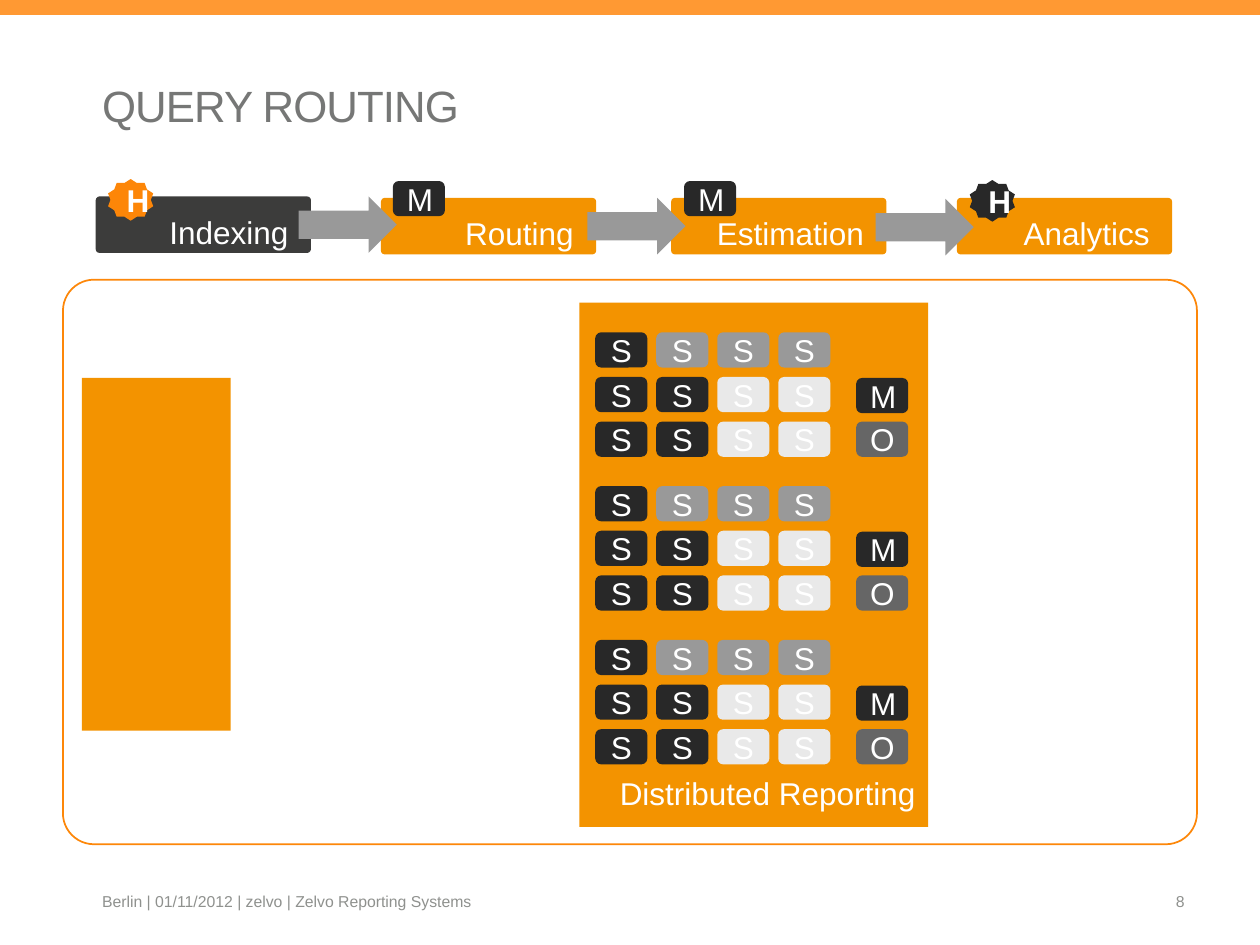
from dataclasses import dataclass

from pptx import Presentation
from pptx.dml.color import RGBColor
from pptx.enum.shapes import MSO_SHAPE
from pptx.enum.text import MSO_ANCHOR, MSO_AUTO_SIZE, PP_ALIGN
from pptx.util import Cm, Pt


@dataclass(frozen=True)
class Theme:
    font: str = "Arial"
    title_size: int = 25
    title_leading: int = 26
    label_size: int = 18
    footer_size: int = 9
    bar: str = "FF9933"
    outline: str = "FD8709"
    orange: str = "F39300"
    badge: str = "FD8608"
    charcoal: str = "3C3C3B"
    black: str = "282828"
    dark_grey: str = "666666"
    grey: str = "999999"
    pale: str = "E9E9E9"
    white: str = "FFFFFF"
    title: str = "767776"
    footer: str = "8F918E"


class SlideBuilder:
    def __init__(self, slide, theme):
        self.slide = slide
        self.theme = theme

    def style(self, paragraph, size, color, align, bold=False):
        paragraph.alignment = align
        font = paragraph.font
        font.name = self.theme.font
        font.size = Pt(size)
        font.bold = bold
        font.color.rgb = RGBColor.from_string(color)

    def inset(self, frame, left, top, right, bottom):
        frame.margin_left, frame.margin_top = Cm(left), Cm(top)
        frame.margin_right, frame.margin_bottom = Cm(right), Cm(bottom)

    def title(self, wording, left, top, width, height):
        heading = self.slide.shapes.title
        heading.left, heading.top = Cm(left), Cm(top)
        heading.width, heading.height = Cm(width), Cm(height)
        frame = heading.text_frame
        frame.text = wording
        frame.auto_size = MSO_AUTO_SIZE.NONE
        frame.vertical_anchor = MSO_ANCHOR.TOP
        self.inset(frame, 0.79, 0.13, 0.25, 0.13)
        paragraph = frame.paragraphs[0]
        self.style(paragraph, self.theme.title_size, self.theme.title, PP_ALIGN.LEFT)
        paragraph.line_spacing = Pt(self.theme.title_leading)
        paragraph.runs[0]._r.get_or_add_rPr().set("spc", "-50")

    def shape(self, preset, left, top, width, height, fill=None, line=None, corner=None):
        block = self.slide.shapes.add_shape(preset, Cm(left), Cm(top), Cm(width), Cm(height))
        block.shadow.inherit = False
        if fill:
            block.fill.solid()
            block.fill.fore_color.rgb = RGBColor.from_string(fill)
        else:
            block.fill.background()
        if line:
            block.line.color.rgb = RGBColor.from_string(line)
            block.line.width = Pt(1)
        else:
            block.line.fill.background()
        if corner is not None:
            block.adjustments[0] = corner
        return block

    def label(self, block, wording, align=PP_ALIGN.CENTER, anchor=MSO_ANCHOR.MIDDLE, bold=False):
        frame = block.text_frame
        frame.text = wording
        frame.vertical_anchor = anchor
        self.style(frame.paragraphs[0], self.theme.label_size, self.theme.white, align, bold)
        return frame

    def stage(self, name, left, top, fill):
        block = self.shape(MSO_SHAPE.ROUNDED_RECTANGLE, left, top, 4.34, 1.14, fill, corner=0.069)
        self.inset(self.label(block, name, PP_ALIGN.RIGHT), 0.25, 0.41, 0.43, 0.13)

    def arrow(self, left, top):
        self.shape(MSO_SHAPE.RIGHT_ARROW, left, top, 1.98, 1.14, self.theme.grey)

    def node(self, letter, left, top, fill):
        chip = self.shape(MSO_SHAPE.ROUNDED_RECTANGLE, left, top, 1.05, 0.71, fill)
        self.label(chip, letter)

    def star(self, letter, left, top, fill):
        badge = self.shape(MSO_SHAPE.STAR_10_POINT, left, top, 0.91, 0.84, fill)
        self.label(badge, letter, bold=True)

    def cluster(self, left, top):
        theme = self.theme
        row_fills = (
            (theme.black, theme.grey, theme.grey, theme.grey),
            (theme.black, theme.black, theme.pale, theme.pale),
            (theme.black, theme.black, theme.pale, theme.pale),
        )
        column_step, row_step = 1.23, 0.9
        for row, fills in enumerate(row_fills):
            for column, fill in enumerate(fills):
                self.node("S", left + column * column_step, top + row * row_step, fill)
        self.node("M", left + 5.26, top + row_step + 0.02, theme.black)
        self.node("O", left + 5.26, top + 2 * row_step, theme.dark_grey)

    def footer(self, wording, left, width, align, left_inset):
        box = self.slide.shapes.add_textbox(Cm(left), Cm(17.65), Cm(width), Cm(1.02))
        frame = box.text_frame
        frame.word_wrap = True
        frame.vertical_anchor = MSO_ANCHOR.MIDDLE
        frame.text = wording
        self.inset(frame, left_inset, 0.13, 0.25, 0.13)
        self.style(frame.paragraphs[0], self.theme.footer_size, self.theme.footer, align)


def main():
    theme = Theme()
    presentation = Presentation()
    presentation.slide_width, presentation.slide_height = Cm(25.4), Cm(19.05)
    builder = SlideBuilder(presentation.slides.add_slide(presentation.slide_layouts[5]), theme)

    builder.shape(MSO_SHAPE.RECTANGLE, 0, 0, 25.4, 0.3, theme.bar)
    builder.shape(MSO_SHAPE.ROUNDED_RECTANGLE, 1.27, 5.64, 22.86, 11.38,
                  line=theme.outline, corner=0.055)
    builder.shape(MSO_SHAPE.RECTANGLE, 1.65, 7.62, 3, 7.11, theme.orange)
    builder.title("QUERY ROUTING", 1.27, 1.6, 18, 4.04)
    builder.footer("8", 18.21, 5.92, PP_ALIGN.RIGHT, 0.25)
    builder.footer("Berlin | 01/11/2012 | zelvo | Zelvo Reporting Systems",
                   2.06, 8.05, PP_ALIGN.LEFT, 0)

    stages = (
        ("Indexing", 1.93, 3.96, theme.charcoal),
        ("Routing", 7.68, 3.99, theme.orange),
        ("Estimation", 13.53, 3.99, theme.orange),
        ("Analytics", 19.29, 3.99, theme.orange),
    )
    for stage in stages:
        builder.stage(*stage)
    for arrow_left, arrow_top in ((6.02, 3.96), (11.84, 3.99), (17.65, 4.01)):
        builder.arrow(arrow_left, arrow_top)
    builder.star("H", 2.18, 3.61, theme.badge)
    builder.node("M", 7.92, 3.65, theme.black)
    builder.node("M", 13.79, 3.65, theme.black)
    builder.star("H", 19.55, 3.63, theme.black)

    reporting = builder.shape(MSO_SHAPE.RECTANGLE, 11.68, 6.1, 7.03, 10.57, theme.orange)
    reporting_label = builder.label(reporting, "Distributed Reporting",
                                    PP_ALIGN.RIGHT, MSO_ANCHOR.BOTTOM)
    builder.inset(reporting_label, 0.25, 0.13, 0.25, 0.3)
    for index in range(3):
        builder.cluster(12, 6.7 + index * 3.1)

    presentation.save("out.pptx")


if __name__ == "__main__":
    main()
